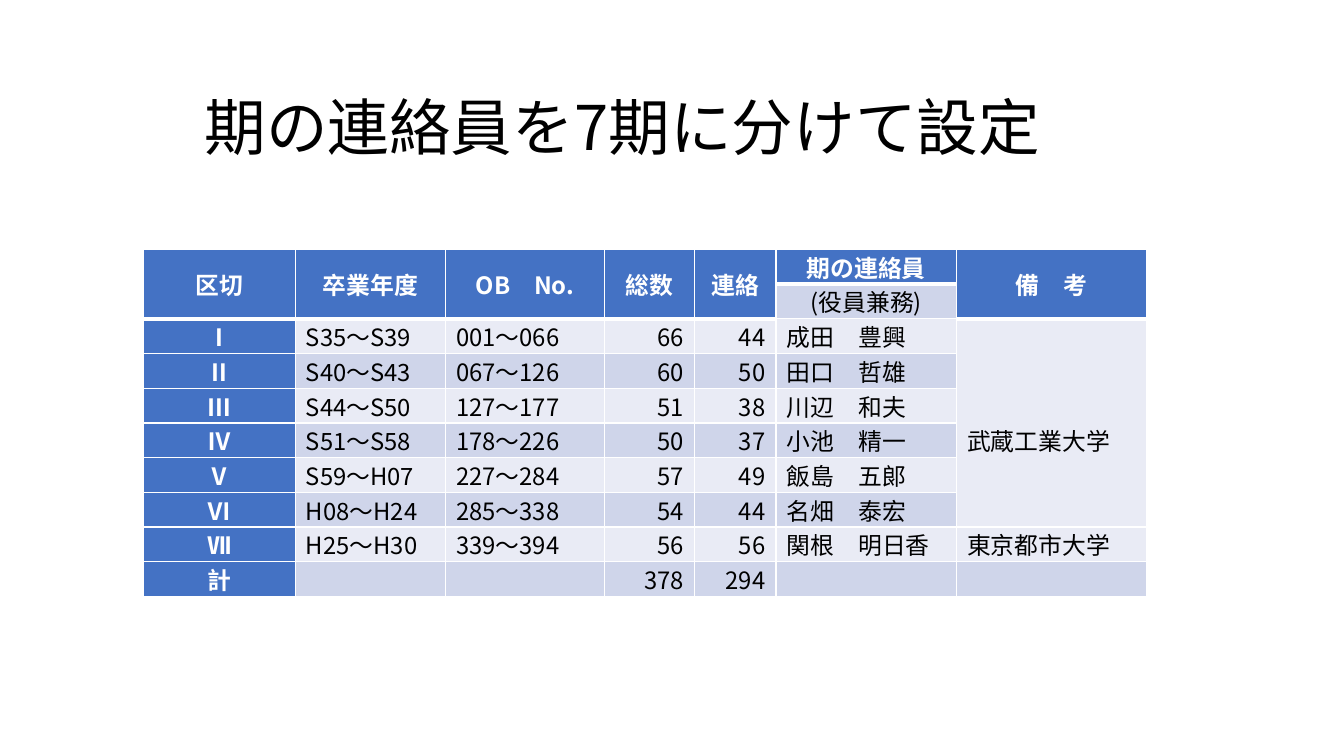
from lxml.etree import SubElement
from pptx import Presentation
from pptx.dml.color import RGBColor
from pptx.enum.text import MSO_ANCHOR, PP_ALIGN
from pptx.oxml.ns import qn
from pptx.util import Pt

# Content
TITLE = "期の連絡員を7期に分けて設定"
HEADER = ("区切", "卒業年度", "OB　No.", "総数", "連絡", "期の連絡員", "備　考")
SUBHEADER = ("", "", "", "", "", "(役員兼務)", "")
PERIODS = [
    ("Ⅰ", "S35～S39", "001～066", "66", "44", "成田　豊興", "武蔵工業大学"),
    ("Ⅱ", "S40～S43", "067～126", "60", "50", "田口　哲雄", ""),
    ("Ⅲ", "S44～S50", "127～177", "51", "38", "川辺　和夫", ""),
    ("Ⅳ", "S51～S58", "178～226", "50", "37", "小池　精一", ""),
    ("Ⅴ", "S59～H07", "227～284", "57", "49", "飯島　五郎", ""),
    ("Ⅵ", "H08～H24", "285～338", "54", "44", "名畑　泰宏", ""),
    ("Ⅶ", "H25～H30", "339～394", "56", "56", "関根　明日香", "東京都市大学"),
]
TOTAL = ("計", "", "", "378", "294", "", "")
ROWS = [HEADER, SUBHEADER, *PERIODS, TOTAL]

# Style, lengths in points
FONT = "Noto Sans CJK JP"
BLUE, BAND_DARK, BAND_LIGHT = "4472C4", "CFD5EA", "E9EBF5"
WHITE, BLACK = "FFFFFF", "000000"
COLUMN_WIDTHS = (108.7, 107.3, 113.8, 64.1, 58.3, 128.9, 136.1)
ROW_HEIGHT = 24.65
TABLE_LEFT, TABLE_TOP = 102.2, 178.2
CONTACT_COLUMN, NOTE_COLUMN = 5, 6
JUSTIFY, RIGHT = PP_ALIGN.JUSTIFY, PP_ALIGN.RIGHT
ALIGNMENTS = (PP_ALIGN.CENTER, JUSTIFY, JUSTIFY, RIGHT, RIGHT, JUSTIFY, JUSTIFY)


def color(value):
    return RGBColor.from_string(value)


def add_text(paragraph, text, size, text_color, bold=False):
    run = paragraph.add_run()
    run.text = text
    run.font.size = Pt(size)
    run.font.bold = bold
    run.font.name = FONT
    run.font.color.rgb = color(text_color)
    SubElement(run.font._element, qn("a:ea"), typeface=FONT)


def add_border(cell, side, width):
    properties = cell._tc.get_or_add_tcPr()
    line = SubElement(properties, qn("a:" + side), w=str(Pt(width)))
    fill = SubElement(line, qn("a:solidFill"))
    SubElement(fill, qn("a:srgbClr"), val=WHITE)


def edge_width(row, column):
    """Width of the line above a row; the header ends with a thick one."""
    header_end = 1 if column == CONTACT_COLUMN else 2
    return 3 if row == header_end else 1


def style_cell(cell, row, column, text):
    is_heading = row == 0 or column == 0
    for side, width in (("lnL", 1), ("lnR", 1),
                        ("lnT", edge_width(row, column)),
                        ("lnB", edge_width(row + 1, column))):
        add_border(cell, side, width)
    band = BAND_DARK if row % 2 else BAND_LIGHT
    cell.fill.solid()
    cell.fill.fore_color.rgb = color(BLUE if is_heading else band)
    cell.vertical_anchor = MSO_ANCHOR.MIDDLE
    cell.margin_left = cell.margin_right = Pt(7.6)
    cell.margin_top = cell.margin_bottom = Pt(0)
    paragraph = cell.text_frame.paragraphs[0]
    paragraph.alignment = PP_ALIGN.CENTER if row < 2 else ALIGNMENTS[column]
    paragraph.font.size = Pt(17)
    if text:
        add_text(paragraph, text, 17, WHITE if is_heading else BLACK, is_heading)


presentation = Presentation()
presentation.slide_width, presentation.slide_height = Pt(960), Pt(540)
slide = presentation.slides.add_slide(presentation.slide_layouts[6])

# Table
table = slide.shapes.add_table(
    len(ROWS), len(HEADER), Pt(TABLE_LEFT), Pt(TABLE_TOP),
    Pt(sum(COLUMN_WIDTHS)), Pt(ROW_HEIGHT * len(ROWS))).table
for table_column, width in zip(table.columns, COLUMN_WIDTHS):
    table_column.width = Pt(width)
for row, texts in enumerate(ROWS):
    table.rows[row].height = Pt(ROW_HEIGHT)
    for column, text in enumerate(texts):
        style_cell(table.cell(row, column), row, column, text)

# Merged headings, and the note that spans the first six periods
for column in range(len(HEADER)):
    if column != CONTACT_COLUMN:
        table.cell(0, column).merge(table.cell(1, column))
note = table.cell(2, NOTE_COLUMN)
note.merge(table.cell(7, NOTE_COLUMN))
note.margin_top = Pt(ROW_HEIGHT)  # centres the note on the fourth period

# Title
title = slide.shapes.add_textbox(Pt(139), Pt(41), Pt(643), Pt(104.4))
title.text_frame.word_wrap = True
title.text_frame.vertical_anchor = MSO_ANCHOR.MIDDLE
title_paragraph = title.text_frame.paragraphs[0]
title_paragraph.line_spacing = 0.9
add_text(title_paragraph, TITLE, 44, BLACK)

presentation.save("out.pptx")
